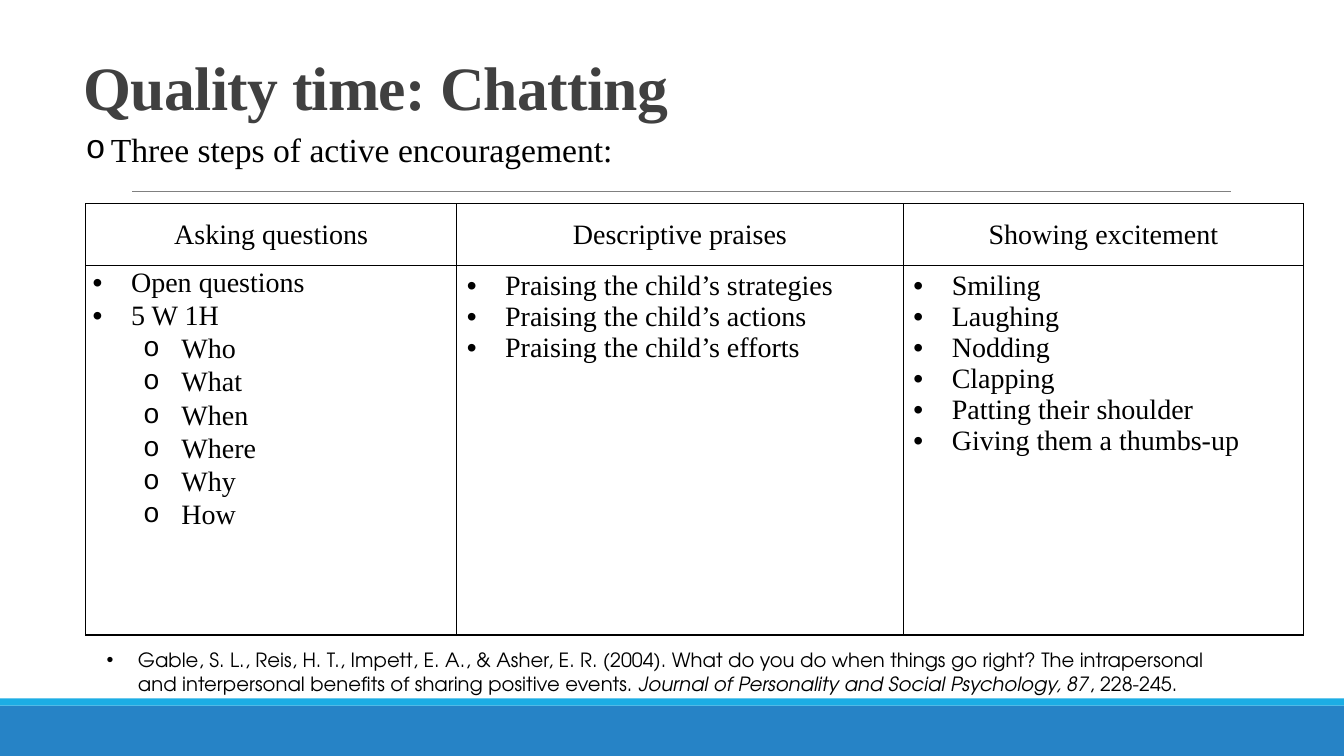
from pptx import Presentation
from pptx import util as u
from pptx.dml import color
from pptx.enum import shapes, text
from pptx.oxml import ns, xmlchemy

PX = 9144
COLORS = {"band": "2683C6", "stripe": "1CADE4", "rule": "808080",
          "ink": "000000", "title": "404040"}
SERIF = "Times New Roman"
SANS = "TeX Gyre Adventor"
BULLET_FONTS = {"•": "Arial", "o": "Courier New"}
HEADINGS = ["Asking questions", "Descriptive praises", "Showing excitement"]
QUESTIONS = [("Open questions", 0), ("5 W 1H", 0)] + [
    (word, 1) for word in ("Who", "What", "When", "Where", "Why", "How")]
PRAISES = [(f"Praising the child’s {target}", 0)
           for target in ("strategies", "actions", "efforts")]
EXCITEMENT = [(action, 0) for action in (
    "Smiling", "Laughing", "Nodding", "Clapping",
    "Patting their shoulder", "Giving them a thumbs-up")]
REFERENCE = [
    ("Gable, S. L., Reis, H. T., Impett, E. A., & Asher, E. R. (2004). "
     "What do you do when things go right? The intrapersonal and "
     "interpersonal benefits of sharing positive events. ", False),
    ("Journal of Personality and Social Psychology, 87", True),
    (", 228-245.", False)]


def px(*lengths):
    return [u.Emu(length * PX) for length in lengths]


def rgb(name):
    return color.RGBColor.from_string(COLORS[name])


def apply(target, **values):
    for name, value in values.items():
        setattr(target, name, value)


def place(shape, box):
    apply(shape, **dict(zip(("left", "top", "width", "height"), px(*box))))


def add_element(parent, tag, **attributes):
    element = xmlchemy.OxmlElement(tag)
    for name, value in attributes.items():
        element.set(name, str(value))
    parent.append(element)
    return element


def add_run(paragraph, wording, size, font=SERIF, ink="ink", **values):
    run = paragraph.add_run()
    run.text = wording
    apply(run.font, size=u.Pt(size), name=font, **values)
    run.font.color.rgb = rgb(ink)
    return run


def set_bullet(paragraph, character, margin, hanging):
    properties = paragraph._p.get_or_add_pPr()
    properties.set("marL", str(margin * PX))
    properties.set("indent", str(-hanging * PX))
    add_element(properties, "a:buFont", typeface=BULLET_FONTS[character])
    add_element(properties, "a:buChar", char=character)


def add_bar(slide, box, fill):
    bar = slide.shapes.add_shape(shapes.MSO_SHAPE.RECTANGLE, *px(*box))
    bar.shadow.inherit = False
    bar.fill.solid()
    bar.fill.fore_color.rgb = rgb(fill)
    bar.line.fill.background()


def add_footer(slide, box):
    left, top, width, height = box
    add_bar(slide, (left, top + 7, width, height - 7), "band")
    add_bar(slide, (left, top, width, 7), "stripe")


def add_rule(slide, box):
    left, top, width, height = box
    rule = slide.shapes.add_connector(
        shapes.MSO_CONNECTOR.STRAIGHT,
        *px(left, top, left + width, top + height))
    rule.line.color.rgb = rgb("rule")
    rule.line.width = u.Pt(0.5)
    add_element(rule._element.spPr, "a:effectLst")


def fill_title(slide, box):
    title = slide.shapes.title
    place(title, box)
    apply(title.text_frame, vertical_anchor=text.MSO_ANCHOR.BOTTOM,
          auto_size=text.MSO_AUTO_SIZE.NONE, word_wrap=True)
    paragraph = title.text_frame.paragraphs[0]
    apply(paragraph, alignment=text.PP_ALIGN.LEFT, line_spacing=0.85)
    run = add_run(paragraph, "Quality time: Chatting", 44, ink="title", bold=True)
    run.font._element.set("spc", "-50")


def fill_lead(slide, box):
    lead = slide.placeholders[1]
    place(lead, box)
    apply(lead.text_frame, vertical_anchor=text.MSO_ANCHOR.TOP,
          auto_size=text.MSO_AUTO_SIZE.NONE, word_wrap=True)
    paragraph = lead.text_frame.paragraphs[0]
    apply(paragraph, line_spacing=0.9, space_before=u.Pt(0))
    set_bullet(paragraph, "o", 25, 25)
    add_run(paragraph, "Three steps of active encouragement:", 24)


def set_borders(cell):
    properties = cell._tc.get_or_add_tcPr()
    for index, side in enumerate(("a:lnL", "a:lnR", "a:lnT", "a:lnB")):
        border = xmlchemy.OxmlElement(side)
        border.set("w", str(u.Pt(1)))
        fill = add_element(border, "a:solidFill")
        add_element(fill, "a:srgbClr", val=COLORS["ink"])
        properties.insert(index, border)


def fill_cell(cell, items, header, tight):
    cell.fill.background()
    set_borders(cell)
    if tight:
        apply(cell, **dict(zip(
            ("margin_left", "margin_top", "margin_right", "margin_bottom"),
            px(7, 0, 7, 0))))
    if header:
        cell.vertical_anchor = text.MSO_ANCHOR.MIDDLE
    frame = cell.text_frame
    for index, (wording, level) in enumerate(items):
        paragraph = frame.add_paragraph() if index else frame.paragraphs[0]
        if tight:
            paragraph.line_spacing = 1.07
        if header:
            paragraph.alignment = text.PP_ALIGN.CENTER
        else:
            paragraph.level = level
            set_bullet(paragraph, "•o"[level], 38 + 50 * level, 38)
        add_run(paragraph, wording, 20, bold=False)


def add_steps_table(slide, box):
    table = slide.shapes.add_table(2, 3, *px(*box)).table
    apply(table, first_row=False, horz_banding=False)
    for column, width in zip(table.columns, px(368, 443, box[2] - 811)):
        column.width = width
    for row, height in zip(table.rows, px(61, box[3] - 61)):
        row.height = height
    lists = (QUESTIONS, PRAISES, EXCITEMENT)
    for column, (heading, items) in enumerate(zip(HEADINGS, lists)):
        fill_cell(table.cell(0, column), [(heading, 0)], True, True)
        fill_cell(table.cell(1, column), items, False, column == 0)


def add_reference(slide, box):
    frame = slide.shapes.add_textbox(*px(*box)).text_frame
    apply(frame, word_wrap=True, auto_size=text.MSO_AUTO_SIZE.SHAPE_TO_FIT_TEXT)
    paragraph = frame.paragraphs[0]
    set_bullet(paragraph, "•", 31, 31)
    for wording, italic in REFERENCE:
        add_run(paragraph, wording, 14, SANS, italic=italic)


def build_slide(presentation):
    slide = presentation.slides.add_slide(presentation.slide_layouts[1])
    add_footer(slide, (0, 693, 1333, 57))
    add_rule(slide, (131, 190, 1090, 0))
    fill_title(slide, (73, 5, 1150, 122))
    fill_lead(slide, (75, 127, 1238, 90))
    add_steps_table(slide, (85, 202, 1208, 428))
    add_reference(slide, (96, 638, 1150, 57))


def main():
    presentation = Presentation()
    width, height = px(1333, 750)
    apply(presentation, slide_width=width, slide_height=height)
    build_slide(presentation)
    presentation.save("out.pptx")


if __name__ == "__main__":
    main()
